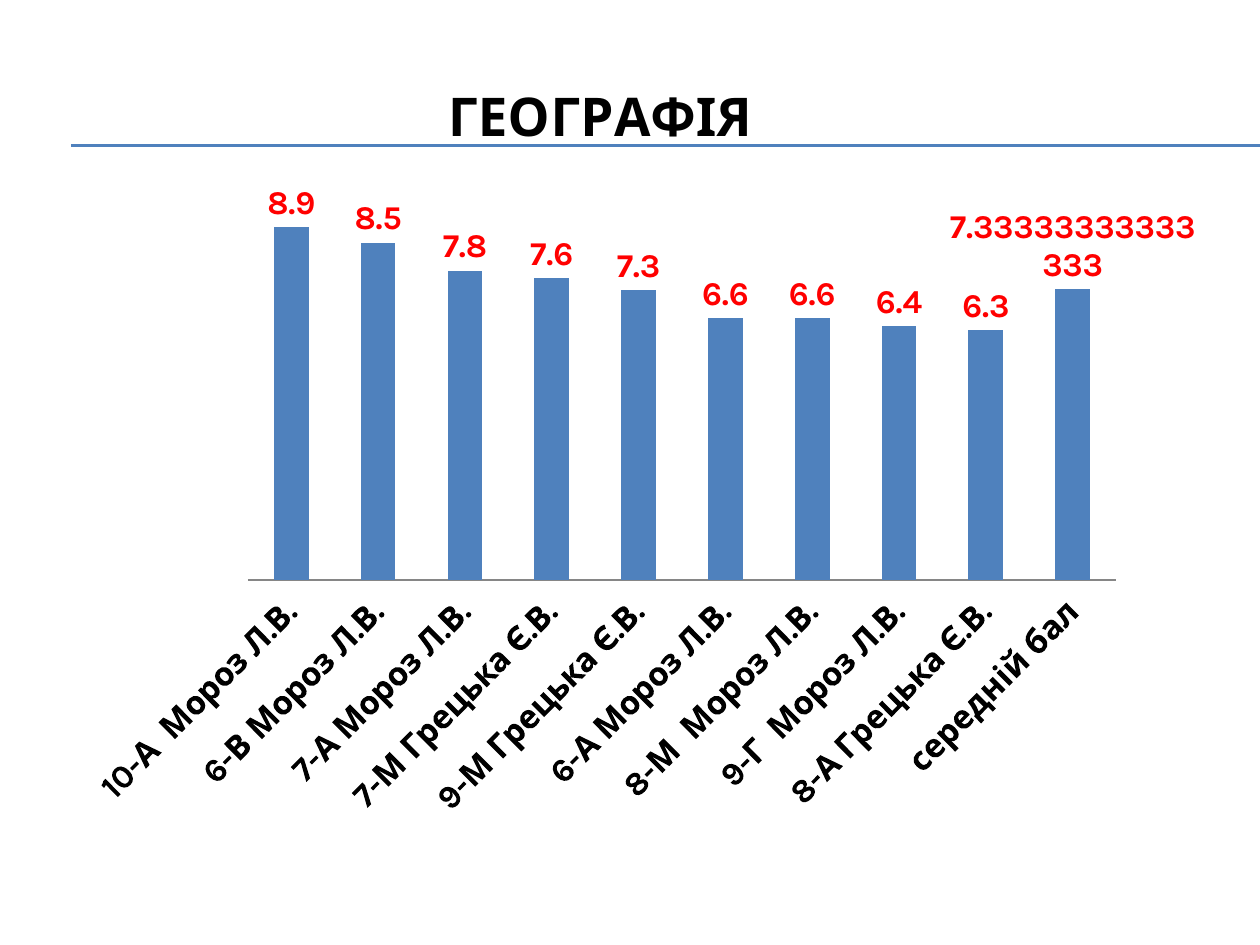
"""Build a slide with a column chart of average geography marks by class."""
from lxml.etree import SubElement
from pptx import Presentation
from pptx.chart.data import CategoryChartData
from pptx.dml.color import RGBColor
from pptx.enum.chart import XL_CHART_TYPE as ChartType
from pptx.enum.chart import XL_LABEL_POSITION as LabelPosition
from pptx.enum.chart import XL_TICK_LABEL_POSITION as TickLabelPosition
from pptx.enum.chart import XL_TICK_MARK as TickMark
from pptx.enum.shapes import MSO_CONNECTOR as Connector
from pptx.oxml import parse_xml
from pptx.oxml.ns import nsdecls, qn
from pptx.util import Pt

SCALE = 914400 // 126
COLORS = {"blue": "4F81BD", "black": "000000", "red": "FF0000", "gray": "868686"}
MARKS = {
    "10-А  Мороз Л.В.": 8.9,
    "6-В Мороз Л.В.": 8.5,
    "7-А Мороз Л.В.": 7.8,
    "7-М Грецька Є.В.": 7.6,
    "9-М Грецька Є.В.": 7.3,
    "6-А Мороз Л.В.": 6.6,
    "8-М  Мороз Л.В.": 6.6,
    "9-Г  Мороз Л.В.": 6.4,
    "8-А Грецька Є.В.": 6.3,
    "середній бал": 7.33,
}
AVERAGE_LABEL = "7.33333333333333"


def px(*lengths):
    return [length * SCALE for length in lengths]


def set_values(target, values):
    for name, value in values.items():
        setattr(target, name, value)


class SlideBuilder:
    """Hold the style and the current slide."""

    font_name = "Karla"
    title_size = 30.5
    label_size = 19

    def __init__(self, slide):
        self.slide = slide

    def color(self, name):
        return RGBColor.from_string(COLORS[name])

    def format_font(self, font, size, color="black", bold=True):
        set_values(font, {"name": self.font_name, "size": Pt(size), "bold": bold})
        font.color.rgb = self.color(color)

    def place(self, element, index, **fractions):
        for layout in element.findall(qn("c:layout")):
            element.remove(layout)
        modes = {"xMode": "edge", "yMode": "edge"}
        if "w" in fractions:
            modes = {"layoutTarget": "inner", **modes}
        layout = parse_xml(f"<c:layout {nsdecls('c')}><c:manualLayout/></c:layout>")
        for name, value in {**modes, **fractions}.items():
            SubElement(layout[0], qn(f"c:{name}")).set("val", str(value))
        element.insert(index, layout)

    def line(self, left, right, top):
        connector = self.slide.shapes.add_connector(
            Connector.STRAIGHT, *px(left, top, right, top))
        connector.line.color.rgb = self.color("blue")
        connector.line.width = Pt(0.75)
        SubElement(connector._element.spPr, qn("a:effectLst"))

    def column_chart(self, title, marks, box):
        data = CategoryChartData()
        data.categories = list(marks)
        data.add_series("Series 1", list(marks.values()))
        chart = self.slide.shapes.add_chart(
            ChartType.COLUMN_CLUSTERED, *px(*box), data).chart
        self.format_font(chart.font, 10, bold=False)
        chart.has_legend = False
        self.chart_title(chart, title)
        self.axes(chart)
        self.columns(chart.plots[0])
        self.average_label(chart.plots[0].series[0].points[len(marks) - 1])
        plot_area = chart._chartSpace.chart.plotArea
        self.place(plot_area, 0, x=0.164, y=0.173, w=0.774, h=0.497)

    def chart_title(self, chart, text):
        chart.has_title = True
        title = chart.chart_title
        title.text_frame.text = text
        self.format_font(title.text_frame.paragraphs[0].runs[0].font, self.title_size)
        self.place(title._element, 1, x=0.334, y=0.032)

    def axes(self, chart):
        set_values(chart.value_axis, {
            "visible": False, "has_major_gridlines": False,
            "minimum_scale": 0, "maximum_scale": 10})
        axis = chart.category_axis
        set_values(axis, {
            "major_tick_mark": TickMark.NONE, "minor_tick_mark": TickMark.NONE,
            "tick_label_position": TickLabelPosition.LOW})
        self.format_font(axis.tick_labels.font, self.label_size)
        axis._element.txPr.bodyPr.set("rot", "-2700000")
        axis.format.line.color.rgb = self.color("gray")
        axis.format.line.width = Pt(1)

    def columns(self, plot):
        set_values(plot, {
            "gap_width": 150, "vary_by_categories": False})
        series = plot.series[0]
        fill = series.format.fill
        fill.solid()
        fill.fore_color.rgb = self.color("blue")
        labels = series.data_labels
        set_values(labels, {
            "show_value": True, "position": LabelPosition.OUTSIDE_END,
            "number_format": "General", "number_format_is_linked": False})
        self.format_font(labels.font, self.label_size, "red")

    def average_label(self, point):
        label = point.data_label
        label.text_frame.text = AVERAGE_LABEL
        run = label.text_frame.paragraphs[0].runs[0]
        self.format_font(run.font, self.label_size, "red")
        label.position = LabelPosition.OUTSIDE_END


def main():
    presentation = Presentation()
    set_values(presentation, {"slide_width": px(1260)[0], "slide_height": px(945)[0]})
    slide = presentation.slides.add_slide(presentation.slide_layouts[6])
    builder = SlideBuilder(slide)
    for top in (145, 146):
        builder.line(71, 1260, top)
    builder.column_chart("ГЕОГРАФІЯ", MARKS, (64, 45, 1133, 799))
    presentation.save("out.pptx")


if __name__ == "__main__":
    main()
